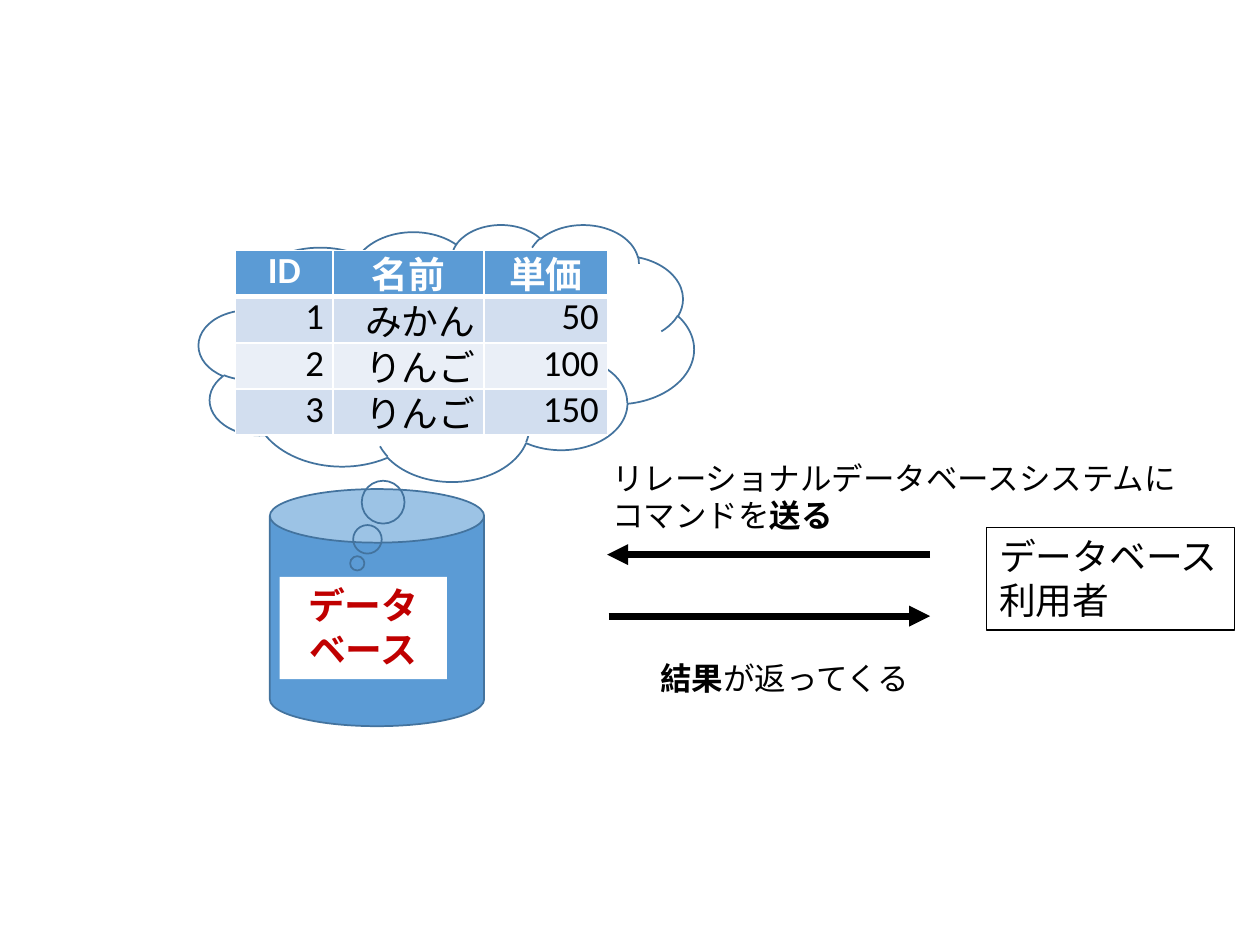
from lxml.etree import SubElement
from pptx import Presentation
from pptx.dml.color import RGBColor
from pptx.enum.shapes import MSO_CONNECTOR as Connector, MSO_SHAPE as Shape
from pptx.enum.text import MSO_ANCHOR as Anchor, MSO_AUTO_SIZE as AutoSize, PP_ALIGN as Align
from pptx.oxml.ns import qn
from pptx.util import Cm, Pt

BLACK, WHITE, RED = "000000", "FFFFFF", "C00000"
BLUE, OUTLINE = "5B9BD5", "43739E"
BANDS = ("D2DEEF", "EAEFF7")


def color(value):
    return RGBColor.from_string(value)


class SlideBuilder:
    def __init__(self, slide, font="Calibri"):
        self.slide = slide
        self.font = font

    def add_runs(self, paragraph, runs, size, ink, font=None):
        """Append (text, bold) pairs to a paragraph."""
        for text, bold in runs:
            run = paragraph.add_run()
            run.text = text
            run.font.name = font or self.font
            run.font.size = Pt(size)
            run.font.bold = bold
            run.font.color.rgb = color(ink)

    def add_lines(self, shape, lines, size, ink=BLACK, align=Align.LEFT, wrap=False, font=None):
        frame = shape.text_frame
        frame.word_wrap = wrap
        frame.auto_size = AutoSize.SHAPE_TO_FIT_TEXT
        frame.vertical_anchor = Anchor.TOP
        for index, runs in enumerate(lines):
            paragraph = frame.add_paragraph() if index else frame.paragraphs[0]
            paragraph.alignment = align
            self.add_runs(paragraph, runs, size, ink, font)

    def shape(self, kind, left, top, width, height, fill=None, line=None, weight=1):
        shape = self.slide.shapes.add_shape(kind, Cm(left), Cm(top), Cm(width), Cm(height))
        shape.shadow.inherit = False
        if fill:
            shape.fill.solid()
            shape.fill.fore_color.rgb = color(fill)
        else:
            shape.fill.background()
        if line:
            shape.line.color.rgb = color(line)
            shape.line.width = Pt(weight)
        else:
            shape.line.fill.background()
        return shape

    def text(self, left, top, width, height, lines, size):
        box = self.slide.shapes.add_textbox(Cm(left), Cm(top), Cm(width), Cm(height))
        self.add_lines(box, lines, size)

    def arrow(self, start_x, end_x, y):
        arrow = self.slide.shapes.add_connector(
            Connector.STRAIGHT, Cm(start_x), Cm(y), Cm(end_x), Cm(y))
        arrow.line.color.rgb = color(BLACK)
        arrow.line.width = Pt(4)
        line = arrow._element.spPr.find(qn("a:ln"))
        SubElement(line, qn("a:tailEnd"), type="triangle")
        SubElement(arrow._element.spPr, qn("a:effectLst"))

    def border(self, cell, side, weight):
        properties = cell._tc.get_or_add_tcPr()
        line = SubElement(properties, qn(f"a:ln{side}"), w=str(Pt(weight)))
        SubElement(SubElement(line, qn("a:solidFill")), qn("a:srgbClr"), val=WHITE)

    def table(self, left, top, widths, row_height, rows, size):
        """Draw a banded table whose first row is the header."""
        table = self.slide.shapes.add_table(
            len(rows), len(widths), Cm(left), Cm(top),
            Cm(sum(widths)), Cm(row_height * len(rows))).table
        for column, width in zip(table.columns, widths):
            column.width = Cm(width)
        for row_index, values in enumerate(rows):
            table.rows[row_index].height = Cm(row_height)
            header = row_index == 0
            for column_index, value in enumerate(values):
                cell = table.cell(row_index, column_index)
                cell.margin_left = cell.margin_right = Cm(0.18)
                cell.margin_top = cell.margin_bottom = Cm(0.09)
                weights = {"L": 1, "R": 1, "T": 3 if row_index == 1 else 1, "B": 3 if header else 1}
                for side, weight in weights.items():
                    self.border(cell, side, weight)
                cell.fill.solid()
                cell.fill.fore_color.rgb = color(BLUE if header else BANDS[(row_index - 1) % 2])
                paragraph = cell.text_frame.paragraphs[0]
                paragraph.alignment = Align.CENTER if header else Align.RIGHT
                paragraph.line_spacing = 0.8
                self.add_runs(paragraph, [(value, header)], size, WHITE if header else BLACK)


def main():
    presentation = Presentation()
    presentation.slide_width, presentation.slide_height = Cm(25.4), Cm(19.05)
    blank_layout = presentation.slide_layouts[6]
    builder = SlideBuilder(presentation.slides.add_slide(blank_layout))

    builder.shape(Shape.CAN, 5.44, 9.86, 4.32, 4.78, BLUE, OUTLINE)
    database_label = builder.shape(Shape.RECTANGLE, 5.64, 11.63, 3.37, 2.06, WHITE)
    builder.add_lines(database_label, [[("データベース", True)]], 21, RED, Align.CENTER,
                      wrap=True, font="Lato")

    cloud = builder.shape(Shape.CLOUD_CALLOUT, 4.01, 4.52, 9.98, 5.18, line=OUTLINE)
    cloud.adjustments[0], cloud.adjustments[1] = -0.18, 0.82

    user = builder.shape(Shape.RECTANGLE, 19.89, 10.64, 5, 2.06, line=BLACK, weight=0.75)
    builder.add_lines(user, [[("データベース", False)], [("利用者", False)]], 21)

    builder.arrow(18.75, 12.24, 11.18)
    builder.arrow(12.27, 18.75, 12.42)
    builder.text(12.09, 9.12, 12.07, 1.8, [
        [("リレーショナルデータベースシステムに", False)],
        [("コマンドを", False), ("送る", True)],
    ], 18)
    builder.text(13.06, 13.16, 5.64, 1.02, [[("結果", True), ("が返ってくる", False)]], 18)

    builder.table(4.75, 5.05, (1.96, 3.05, 2.49), 0.93, [
        ("ID", "名前", "単価"),
        ("1", "みかん", "50"),
        ("2", "りんご", "100"),
        ("3", "りんご", "150"),
    ], 21)
    presentation.save("out.pptx")


if __name__ == "__main__":
    main()
